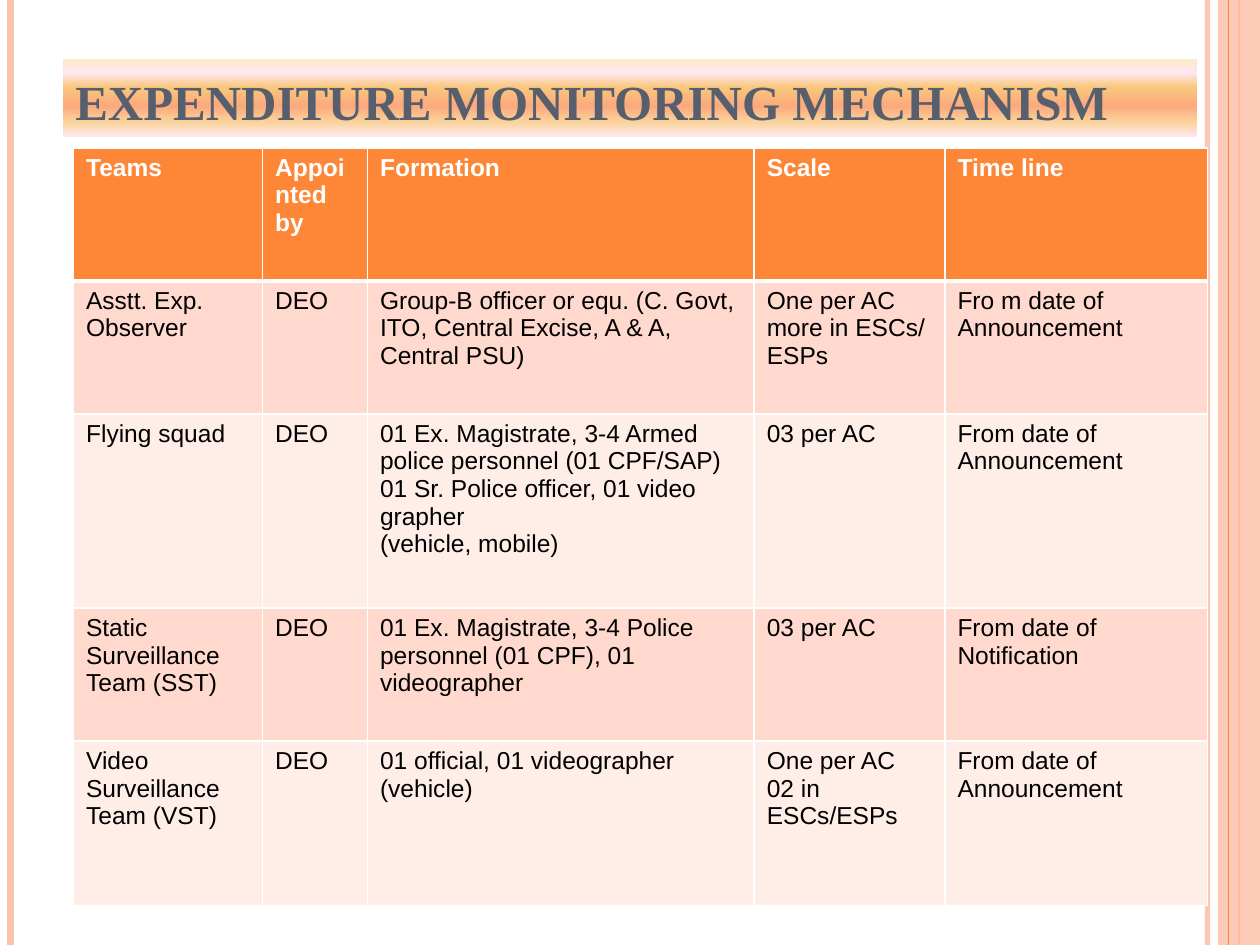
"""Build the expenditure monitoring mechanism slide."""
from dataclasses import dataclass

from lxml import etree
from pptx import Presentation, util as u
from pptx.dml.color import RGBColor
from pptx.enum import shapes, text
from pptx.oxml import parse_xml
from pptx.oxml.ns import qn

DRAWING_NS = "http://schemas.openxmlformats.org/drawingml/2006/main"


@dataclass(frozen=True)
class Theme:
    """Colours, fonts and type sizes of the slide."""
    orange: str = "FE8637"
    peach: str = "FEC3AE"
    bands: tuple = ("FFD9CE", "FFEDE8")
    white: str = "FFFFFF"
    black: str = "000000"
    slate: str = "575F6D"
    title_stops: tuple = ((0, "FBEAC7"), (18, "FEE7F2"), (36, "FAC77D"),
                          (61, "FBA97D"), (82, "FBD49C"), (100, "FEE7F2"))
    title_font: str = "Times New Roman"
    body_font: str = "Arial"
    title_size: float = 28
    body_size: float = 14


@dataclass(frozen=True)
class Stripe:
    """A vertical line running the full height of the page."""
    x: float
    colour: str
    width: float
    opacity: int = 100


THEME = Theme()
WIDTH, HEIGHT = 720, 540
BACK_STRIPES = (Stripe(690, THEME.peach, 3, 93), Stripe(6, THEME.peach, 4.5),
                Stripe(708, THEME.orange, 1.5))
FRONT_STRIPE = Stripe(702, THEME.orange, 0.75)
COLUMN_WIDTHS = (108, 60, 221, 109, 150)
ROW_HEIGHTS = (76, 76, 111, 76, 94)
TEAMS = (
    ("Teams", "Appointed by", "Formation", "Scale", "Time line"),
    ("Asstt. Exp. Observer", "DEO",
     "Group-B officer or equ. (C. Govt, ITO, Central Excise, A & A, Central PSU)",
     "One per AC more in ESCs/ ESPs", "Fro m date of Announcement"),
    ("Flying squad", "DEO",
     "01 Ex. Magistrate, 3-4 Armed police personnel (01 CPF/SAP)\n"
     "01 Sr. Police officer, 01 video grapher\n(vehicle, mobile)",
     "03 per AC", "From date of Announcement"),
    ("Static Surveillance Team (SST)", "DEO",
     "01 Ex. Magistrate, 3-4 Police personnel (01 CPF), 01 videographer",
     "03 per AC", "From date of Notification"),
    ("Video Surveillance Team (VST)", "DEO",
     "01 official, 01 videographer\n(vehicle)",
     "One per AC\n02 in ESCs/ESPs", "From date of Announcement"),
)


def rgb(colour: str) -> RGBColor:
    """Turn a hex string into a colour."""
    return RGBColor.from_string(colour)


def set_opacity(properties, percent: int) -> None:
    """Make the first solid colour inside the properties translucent."""
    colour = properties.find(f".//{qn('a:srgbClr')}")
    etree.SubElement(colour, qn("a:alpha"), val=str(percent * 1000))


def style_text(frame, font: str, size: float, colour: str, bold: bool) -> None:
    """Format every run in a text frame."""
    for para in frame.paragraphs:
        para.alignment = text.PP_ALIGN.LEFT
        for span in para.runs:
            span.font.name = font
            span.font.size = u.Pt(size)
            span.font.color.rgb = rgb(colour)
            span.font.bold = bold


def draw_stripe(page, stripe: Stripe) -> None:
    """Draw one full-height stripe."""
    line = page.shapes.add_connector(
        shapes.MSO_CONNECTOR.STRAIGHT,
        u.Pt(stripe.x), u.Pt(0), u.Pt(stripe.x), u.Pt(HEIGHT))
    line.line.color.rgb = rgb(stripe.colour)
    line.line.width = u.Pt(stripe.width)
    properties = line._element.spPr
    if stripe.opacity < 100:
        set_opacity(properties, stripe.opacity)
    etree.SubElement(properties, qn("a:effectLst"))


def add_box(page, left: float, top: float, width: float, height: float):
    """Add a rectangle without outline or shadow."""
    box = page.shapes.add_shape(
        shapes.MSO_SHAPE.RECTANGLE,
        u.Pt(left), u.Pt(top), u.Pt(width), u.Pt(height))
    box.shadow.inherit = False
    box.line.fill.background()
    return box


def draw_side_band(page) -> None:
    """Draw the translucent band at the right edge."""
    band = add_box(page, 696, 0, WIDTH - 696, HEIGHT)
    band.fill.solid()
    band.fill.fore_color.rgb = rgb(THEME.peach)
    set_opacity(band._element.spPr, 87)


def draw_title(page) -> None:
    """Draw the heading on its gradient bar."""
    box = add_box(page, 36, 33.75, 648, 44.25)
    stops = "".join(f'<a:gs pos="{position * 1000}"><a:srgbClr val="{colour}"/></a:gs>'
                    for position, colour in THEME.title_stops)
    gradient = parse_xml(f'<a:gradFill xmlns:a="{DRAWING_NS}"><a:gsLst>{stops}</a:gsLst>'
                         '<a:lin ang="5400000" scaled="0"/></a:gradFill>')
    box._element.spPr.find(qn("a:prstGeom")).addnext(gradient)
    frame = box.text_frame
    frame.word_wrap = True
    frame.vertical_anchor = text.MSO_ANCHOR.BOTTOM
    frame.text = "EXPENDITURE MONITORING MECHANISM"
    style_text(frame, THEME.title_font, THEME.title_size, THEME.slate, True)


def set_borders(cell, top: float, bottom: float) -> None:
    """Give a cell white borders with the stated top and bottom widths."""
    properties = cell._tc.get_or_add_tcPr()
    for side, width in (("L", 1), ("R", 1), ("T", top), ("B", bottom)):
        line = etree.SubElement(properties, qn(f"a:ln{side}"), w=str(u.Pt(width)))
        fill = etree.SubElement(line, qn("a:solidFill"))
        etree.SubElement(fill, qn("a:srgbClr"), val=THEME.white)


def draw_table(page) -> None:
    """Draw the table of monitoring teams."""
    table = page.shapes.add_table(
        len(ROW_HEIGHTS), len(COLUMN_WIDTHS), u.Pt(42), u.Pt(84.5),
        u.Pt(sum(COLUMN_WIDTHS)), u.Pt(sum(ROW_HEIGHTS))).table
    for column, width in zip(table.columns, COLUMN_WIDTHS):
        column.width = u.Pt(width)
    for index, (row, height, words) in enumerate(zip(table.rows, ROW_HEIGHTS, TEAMS)):
        row.height = u.Pt(height)
        header = index == 0
        fill = THEME.orange if header else THEME.bands[(index - 1) % 2]
        colour = THEME.white if header else THEME.black
        for cell, wording in zip(row.cells, words):
            set_borders(cell, 3 if index == 1 else 1, 3 if header else 1)
            cell.fill.solid()
            cell.fill.fore_color.rgb = rgb(fill)
            cell.text_frame.text = wording
            style_text(cell.text_frame, THEME.body_font, THEME.body_size, colour, header)


def main() -> None:
    """Build and save the deck."""
    deck = Presentation()
    deck.slide_width, deck.slide_height = u.Pt(WIDTH), u.Pt(HEIGHT)
    page = deck.slides.add_slide(deck.slide_layouts[6])
    for stripe in BACK_STRIPES:
        draw_stripe(page, stripe)
    draw_side_band(page)
    draw_stripe(page, FRONT_STRIPE)
    draw_title(page)
    draw_table(page)
    deck.save("out.pptx")


if __name__ == "__main__":
    main()
